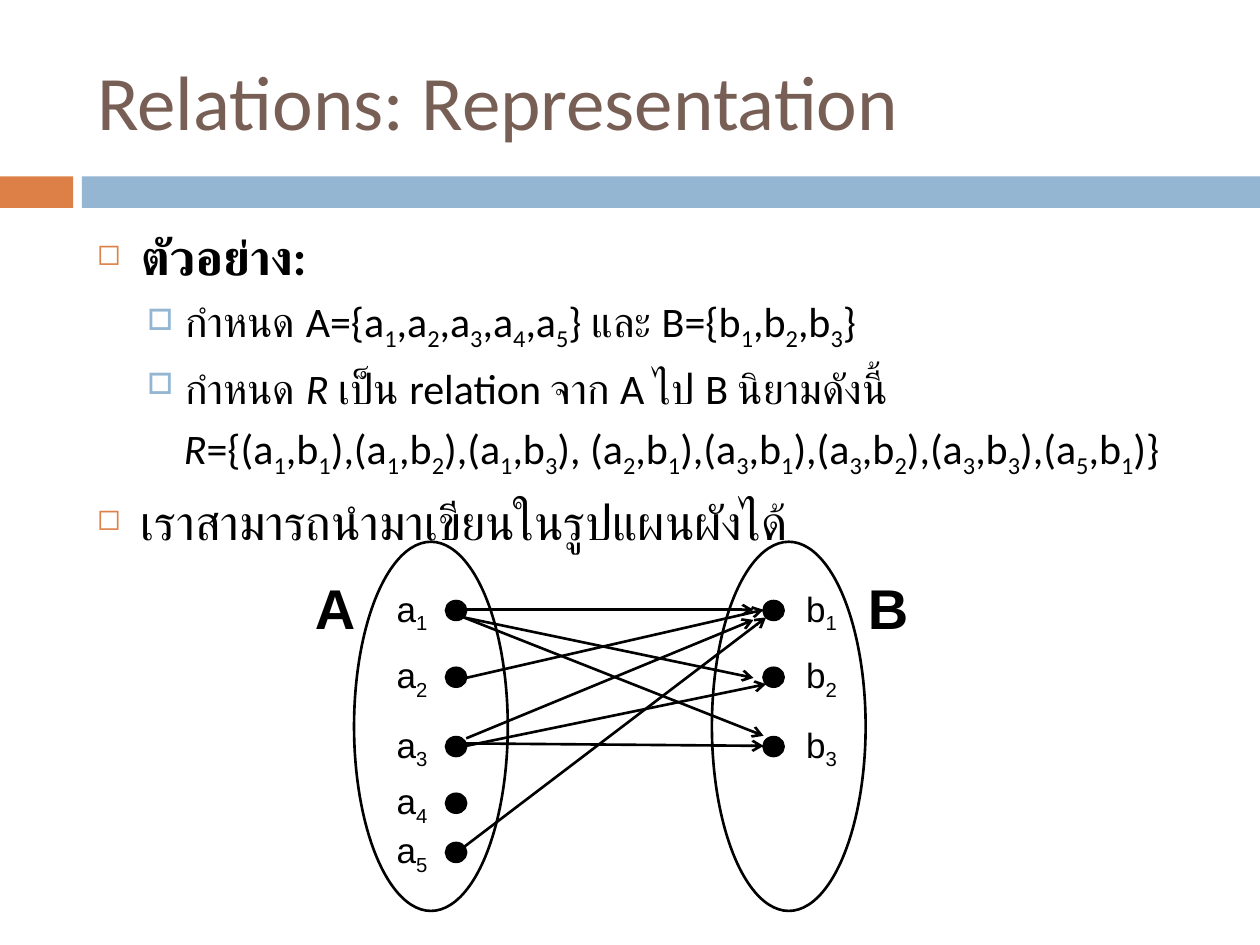
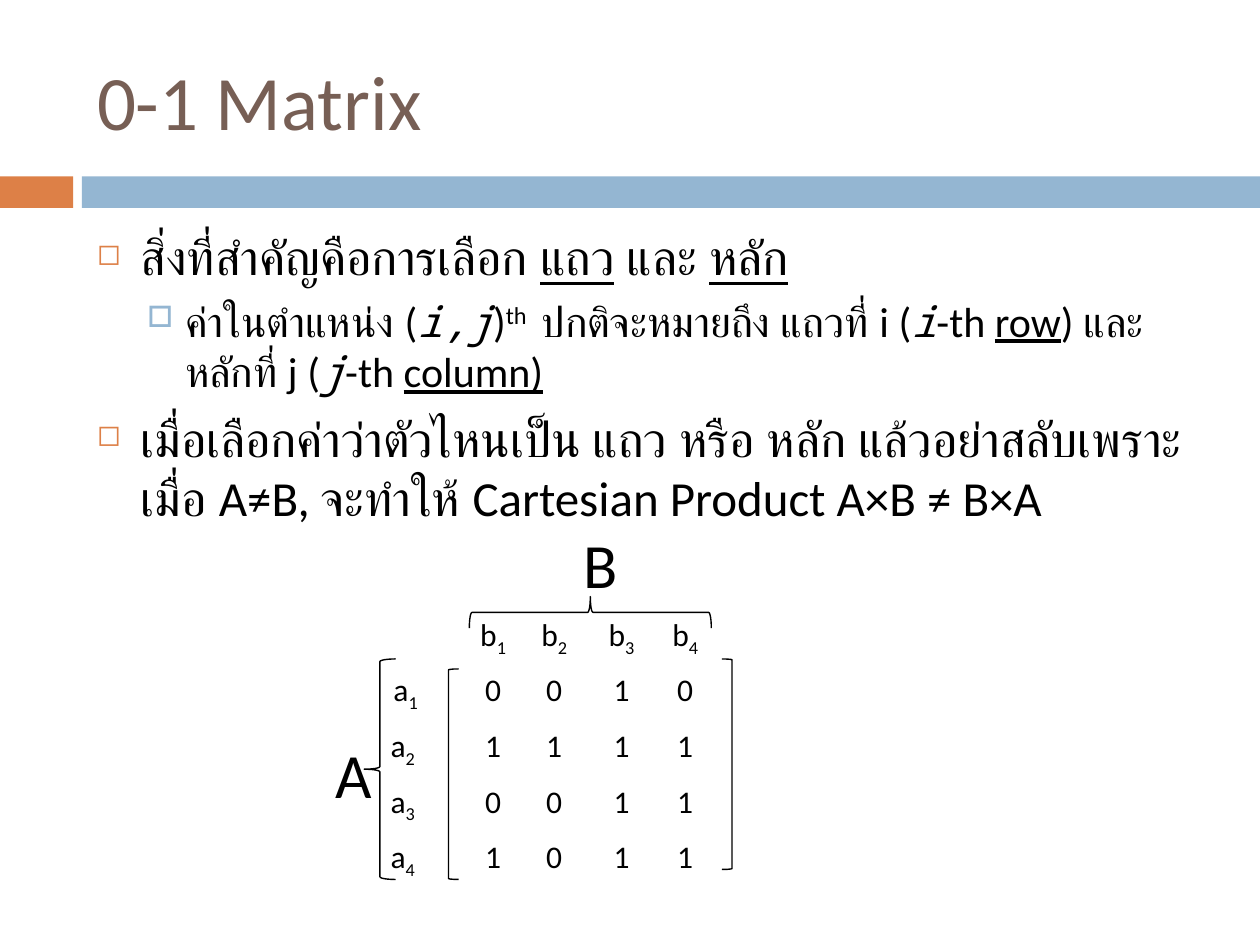
from pptx import Presentation
from pptx.dml.color import RGBColor
from pptx.enum.shapes import MSO_CONNECTOR as Link, MSO_SHAPE as Form
from pptx.enum.text import MSO_ANCHOR as Anchor, MSO_AUTO_SIZE as Fit, PP_ALIGN as Align
from pptx.oxml.ns import qn
from pptx.util import Pt
from lxml.etree import SubElement as Sub

PX = 9144
ink = RGBColor.from_string
BLACK, BROWN, RUST, BLUE = "000000", "775F55", "DD8047", "94B6D2"
FONT, MONO = "Calibri", "Noto Sans Mono"
LEVELS = [(35, -35, 7, 28, "◻", RUST, 60), (70, -30, 5.5, 24, "□", BLUE, 70)]


def write(par, text, size, font=FONT, color=BLACK, bold=False):
    for n, part in enumerate(text.split("|")):
        mark, part = (part[0], part[1:]) if n % 2 else ("", part)
        if not part:
            continue
        run = par.add_run()
        run.text = part
        face = run.font
        face.size, face.bold, face.name = Pt(size), bold, font
        face.color.rgb = ink(color)
        if mark in ("/", "*"):
            face.italic = True
        if mark == "*":
            face.name = MONO
        if mark == "=":
            face.underline = True
        if mark in ("_", "^"):
            run.font._element.set("baseline", "-25000" if mark == "_" else "30000")


def draw(slide, form, box, fill=None, line=None, width=1.5):
    shape = slide.shapes.add_shape(form, *[v * PX for v in box])
    shape.shadow.inherit = False
    if fill:
        shape.fill.solid()
        shape.fill.fore_color.rgb = ink(fill)
    else:
        shape.fill.background()
    if line:
        shape.line.color.rgb = ink(line)
        shape.line.width = Pt(width)
    else:
        shape.line.fill.background()
    return shape


pairs = [(1, 1), (1, 2), (1, 3), (2, 1), (3, 1), (3, 2), (3, 3), (5, 1)]
tuples = [f"(a|_{a}|,b|_{b}|)" for a, b in pairs]
product = ",".join(tuples[:3]) + ", " + ",".join(tuples[3:])
set_a = ",".join(f"a|_{n}|" for n in range(1, 6))
set_b = ",".join(f"b|_{n}|" for n in range(1, 4))

pages = [
    ("Relations: Representation", [
        (0, "ตัวอย่าง:"),
        (1, f"กำหนด A={{{set_a}}} และ B={{{set_b}}}"),
        (1, "กำหนด |/R |เป็น relation จาก A ไป B นิยามดังนี้"),
        (1, f"|/R|={{{product}}}"),
        (0, "เราสามารถนำมาเขียนในรูปแผนผังได้"),
    ]),
    ("0-1 Matrix", [
        (0, "สิ่งที่สำคัญคือการเลือก |=แถว| และ |=หลัก|"),
        (1, "ค่าในตำแหน่ง (|*i,j|)|^th | ปกติจะหมายถึง แถวที่ i (|*i|-th |=row|) "
            "และหลักที่ j (|*j|-th |=column)|"),
        (0, "เมื่อเลือกค่าว่าตัวไหนเป็น แถว หรือ หลัก แล้วอย่าสลับเพราะ "
            "เมื่อ A≠B, จะทำให้ Cartesian Product A×B ≠ B×A"),
    ]),
]

deck = Presentation()
deck.slide_width, deck.slide_height = 1000 * PX, 750 * PX

for head, lines in pages:
    slide = deck.slides.add_slide(deck.slide_layouts[5])
    draw(slide, Form.RECTANGLE, (0, 140, 58, 25), RUST)
    draw(slide, Form.RECTANGLE, (65, 140, 935, 25), BLUE)
    title = slide.shapes.title
    title.left, title.top, title.width, title.height = [v * PX for v in (67, 25, 892, 108)]
    frame = title.text_frame
    frame.auto_size, frame.vertical_anchor = Fit.NONE, Anchor.MIDDLE
    frame.paragraphs[0].alignment = Align.LEFT
    write(frame.paragraphs[0], head, 44, color=BROWN)

    body = slide.shapes.add_textbox(*[v * PX for v in (67, 175, 892, 492)]).text_frame
    body.word_wrap = True
    for n, (level, text) in enumerate(lines):
        par = body.paragraphs[0] if n == 0 else body.add_paragraph()
        left, hang, gap, size, sign, tint, scale = LEVELS[level]
        par.level, par.space_before = level, Pt(gap)
        props = par._p.get_or_add_pPr()
        props.set("marL", str(left * PX))
        props.set("indent", str(hang * PX))
        if text.startswith("|/R|"):
            par.alignment = Align.CENTER
        else:
            Sub(Sub(props, qn("a:buClr")), qn("a:srgbClr"), val=tint)
            Sub(props, qn("a:buSzPct"), val=str(scale * 1000))
            Sub(props, qn("a:buChar"), char=sign)
        write(par, text, size, bold=text == "ตัวอย่าง:")

graph, matrix = deck.slides

rows = [477, 530, 585, 630, 669]
labels = [("A", 240, 450, 65, 65, 32), ("B", 679, 450, 65, 65, 32)]
for name, dot, left, count in [("a", 354, 305, 5), ("b", 606, 630, 3)]:
    for n, y in enumerate(rows[:count], 1):
        draw(graph, Form.OVAL, (dot, y, 16, 15), BLACK, BLACK)
        labels.append((f"{name}|_{n}|", left, y - 16, 57, 44, 20))
for x in (281, 565):
    draw(graph, Form.OVAL, (x, 430, 122, 293), line=BLACK)
for text, x, y, w, h, size in labels:
    frame = graph.shapes.add_textbox(x * PX, y * PX, w * PX, h * PX).text_frame
    frame.word_wrap = True
    write(frame.paragraphs[0], text, size, "Arial", bold=size == 32)

arrows = [
    (370, 484, 598, 484), (368, 490, 598, 538), (368, 490, 606, 584),
    (370, 538, 606, 484), (370, 586, 598, 492), (370, 592, 608, 543),
    (370, 590, 606, 592), (362, 677, 608, 490),
]
for ends in arrows:
    arrow = graph.shapes.add_connector(Link.STRAIGHT, *[v * PX for v in ends])
    arrow.line.color.rgb = ink(BLACK)
    arrow.line.width = Pt(1.5)
    Sub(arrow.line._get_or_add_ln(), qn("a:tailEnd"), type="arrow")
    Sub(arrow._element.spPr, qn("a:effectLst"))

widths = [44, 44, 23, 47, 50, 57, 44, 44]
heights = [70] + [44] * 5
table = matrix.shapes.add_table(
    6, 8, 256 * PX, 414 * PX, sum(widths) * PX, sum(heights) * PX).table
table.horz_banding = False
for col, w in zip(table.columns, widths):
    col.width = w * PX
for row, h in zip(table.rows, heights):
    row.height = h * PX
for row in table.rows:
    for cell in row.cells:
        cell.fill.background()
table.cell(0, 2).merge(table.cell(0, 7))
for col in (0, 2):
    table.cell(2, col).merge(table.cell(5, col))

cells = [(0, 2, "B", 36), (2, 0, "A", 36)]
for r, bits in enumerate(["0010", "1111", "0011", "1011"], 1):
    cells += [(1, r + 2, f"b|_{r}|", 18), (r + 1, 1, f"a|_{r}|", 18)]
    cells += [(r + 1, c, bit, 18) for c, bit in enumerate(bits, 3)]
for r, c, text, size in cells:
    par = table.cell(r, c).text_frame.paragraphs[0]
    par.alignment = Align.LEFT if c == 0 or (c == 1 and r > 2) else Align.CENTER
    write(par, text, size)
table.cell(2, 0).vertical_anchor = Anchor.MIDDLE

for form, box, turn in [
    (Form.LEFT_BRACE, (456, 390, 25, 192), 90),
    (Form.LEFT_BRACE, (289, 523, 25, 175), 0),
    (Form.LEFT_BRACKET, (356, 531, 8, 167), 0),
    (Form.LEFT_BRACKET, (573, 523, 8, 167), 180),
]:
    draw(matrix, form, box, line=BLACK, width=0.79).rotation = turn

deck.save("out.pptx")
